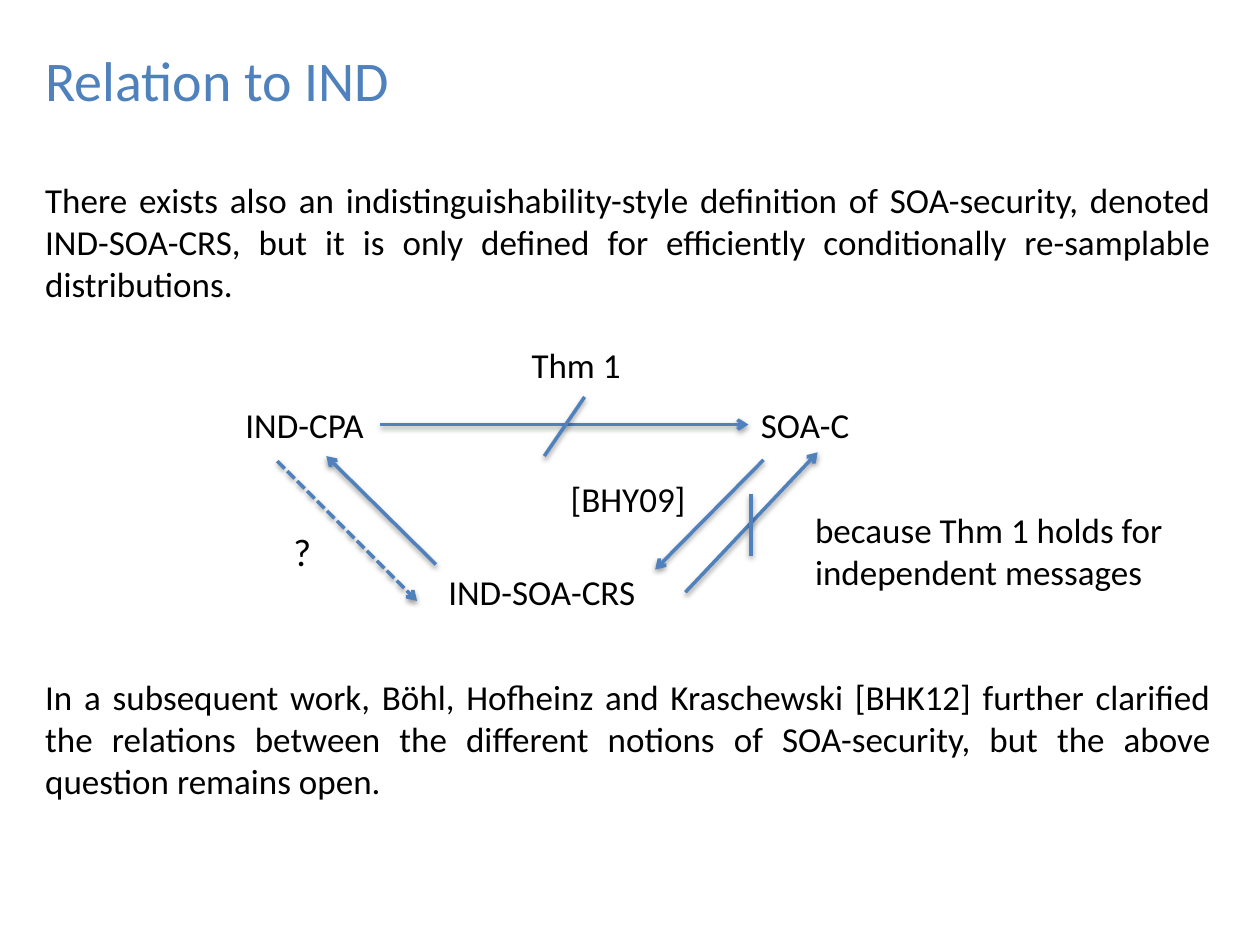
from lxml.etree import SubElement
from pptx import Presentation
from pptx.dml.color import RGBColor
from pptx.enum.dml import MSO_LINE
from pptx.enum.shapes import MSO_CONNECTOR
from pptx.enum.text import MSO_ANCHOR, MSO_AUTO_SIZE, PP_ALIGN
from pptx.oxml.ns import qn
from pptx.util import Inches, Pt

COLORS = {"accent": "4F81BD", "text": "000000", "shadow": "000000"}
FONT = "Calibri"
MARGIN = 0.26
BODY_WIDTH = 9.45

INTRO = (
    "There exists also an indistinguishability-style definition of SOA-security, "
    "denoted IND-SOA-CRS, but it is only defined for efficiently conditionally "
    "re-samplable distributions."
)
OUTLOOK = (
    "In a subsequent work, Böhl, Hofheinz and Kraschewski [BHK12] further clarified "
    "the relations between the different notions of SOA-security, but the above "
    "question remains open."
)
LABELS = [
    ("IND-CPA", (1.85, 3.15, 1.17, 0.44), 20),
    ("IND-SOA-CRS", (3.46, 4.48, 1.71, 0.44), 20),
    ("SOA-C", (5.94, 3.15, 0.91, 0.44), 20),
    ("Thm 1", (4.12, 2.68, 0.92, 0.44), 20),
    ("?", (2.23, 4.14, 0.34, 0.47), 22),
    ("because Thm 1 holds for\nindependent messages", (6.37, 3.99, 2.99, 0.77), 20),
    ("[BHY09]", (4.43, 3.74, 1.12, 0.44), 20),
]
IMPLICATIONS = [
    ((3.02, 3.37), (5.94, 3.37)),
    ((3.46, 4.48), (2.59, 3.62)),
    ((6.06, 3.65), (5.2, 4.52)),
    ((5.44, 4.7), (6.49, 3.59)),
]
OPEN_QUESTION = ((2.2, 3.66), (3.31, 4.77))
NEGATION_STROKES = [
    ((4.32, 3.62), (4.64, 3.15)),
    ((5.96, 4.41), (5.96, 3.92)),
]


def add_text(slide, text, box, size=20, color="text", align=PP_ALIGN.LEFT,
             anchor=MSO_ANCHOR.TOP, wrap=True, grow=True):
    """Add a text box with one paragraph for each line of the text."""
    frame = slide.shapes.add_textbox(*map(Inches, box)).text_frame
    frame.text = text
    frame.word_wrap = wrap
    frame.auto_size = MSO_AUTO_SIZE.SHAPE_TO_FIT_TEXT if grow else MSO_AUTO_SIZE.NONE
    frame.vertical_anchor = anchor
    for paragraph in frame.paragraphs:
        paragraph.alignment = align
        font = paragraph.runs[0].font
        font.name = FONT
        font.size = Pt(size)
        font.color.rgb = RGBColor.from_string(COLORS[color])


def add_shadow(connector):
    """Give a connector a soft shadow straight below it."""
    effects = SubElement(connector._element.spPr, qn("a:effectLst"))
    shadow = SubElement(effects, qn("a:outerShdw"), blurRad=str(Pt(3.1)),
                        dist=str(Pt(1.6)), dir="5400000", rotWithShape="0")
    color = SubElement(shadow, qn("a:srgbClr"), val=COLORS["shadow"])
    SubElement(color, qn("a:alpha"), val="38000")


def add_stroke(slide, start, end, arrow=True, dash=None):
    """Draw a shadowed line between two points, with an arrowhead if wanted."""
    stroke = slide.shapes.add_connector(
        MSO_CONNECTOR.STRAIGHT, *map(Inches, (*start, *end)))
    stroke.line.color.rgb = RGBColor.from_string(COLORS["accent"])
    stroke.line.width = Pt(2)
    if dash:
        stroke.line.dash_style = dash
    if arrow:
        SubElement(stroke.line._get_or_add_ln(), qn("a:tailEnd"), type="arrow")
    add_shadow(stroke)


def add_diagram(slide):
    """Draw the relations between the security notions."""
    for start, end in IMPLICATIONS:
        add_stroke(slide, start, end)
    add_stroke(slide, *OPEN_QUESTION, dash=MSO_LINE.SQUARE_DOT)
    for start, end in NEGATION_STROKES:
        add_stroke(slide, start, end, arrow=False)
    for label, box, size in LABELS:
        add_text(slide, label, box, size=size, wrap=False)


def main():
    """Build the slide and save it."""
    presentation = Presentation()
    presentation.slide_width = Inches(10)
    presentation.slide_height = Inches(7.5)
    slide = presentation.slides.add_slide(presentation.slide_layouts[6])
    add_text(slide, "Relation to IND", (MARGIN, 0, 7.03, 1.25), size=32,
             color="accent", anchor=MSO_ANCHOR.MIDDLE, grow=False)
    for statement, top in ((INTRO, 1.37), (OUTLOOK, 5.31)):
        add_text(slide, statement, (MARGIN, top, BODY_WIDTH, 1.11),
                 align=PP_ALIGN.JUSTIFY)
    add_diagram(slide)
    presentation.save("out.pptx")


if __name__ == "__main__":
    main()
